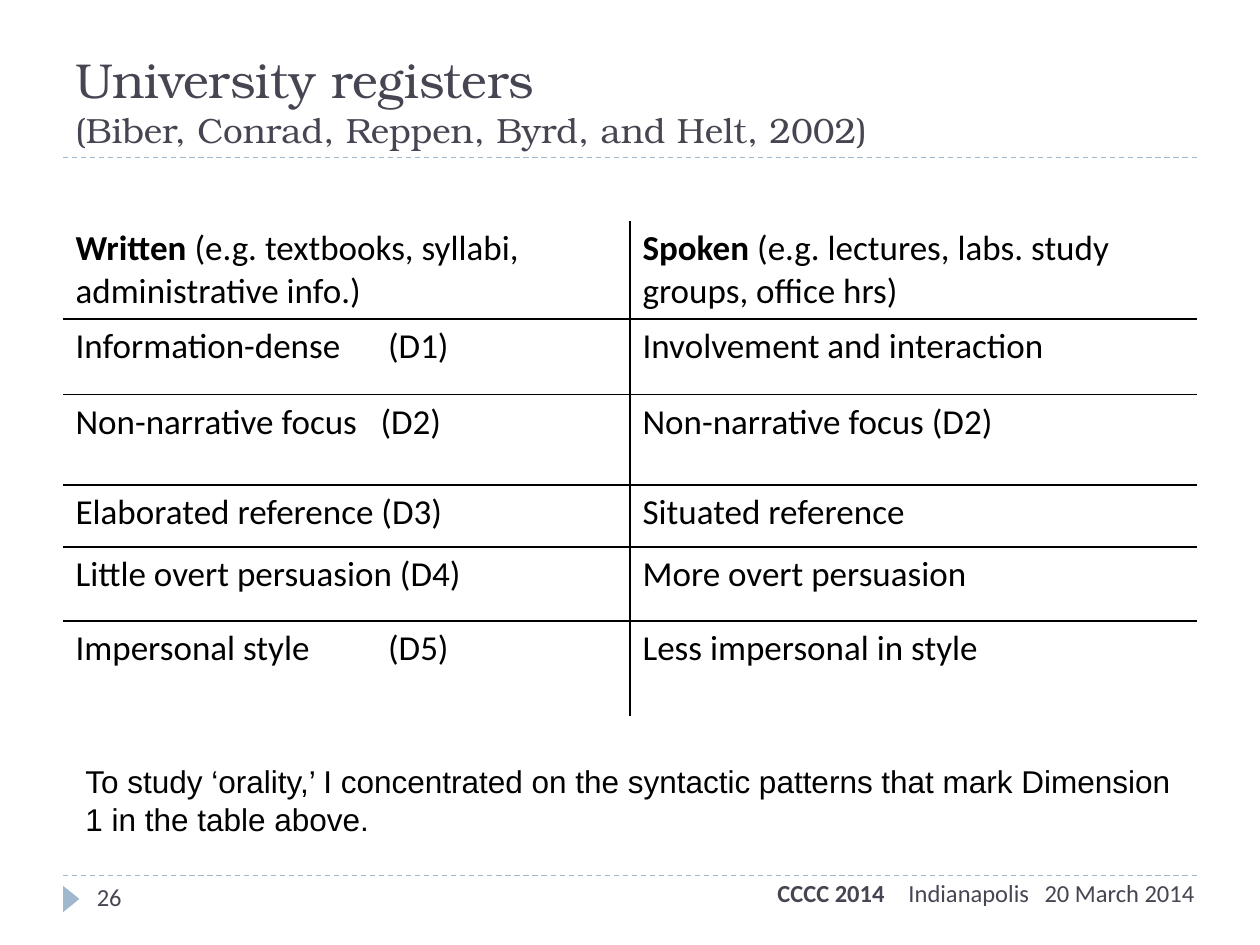
from dataclasses import dataclass

from lxml import etree
from pptx import Presentation
from pptx.dml.color import RGBColor
from pptx.enum.dml import MSO_LINE_DASH_STYLE
from pptx.enum.shapes import MSO_CONNECTOR, MSO_SHAPE
from pptx.enum.text import MSO_ANCHOR
from pptx.oxml.ns import qn
from pptx.util import Inches, Pt

DASH = MSO_LINE_DASH_STYLE.DASH
STRAIGHT = MSO_CONNECTOR.STRAIGHT
TRIANGLE = MSO_SHAPE.ISOSCELES_TRIANGLE
TOP, MIDDLE = MSO_ANCHOR.TOP, MSO_ANCHOR.MIDDLE

BLACK = RGBColor(0x00, 0x00, 0x00)
SLATE = RGBColor(0x46, 0x46, 0x53)
BLUE = RGBColor(0x9F, 0xB8, 0xCD)
SERIF, SANS, BODY = "TeX Gyre Bonum", "Calibri", "Arial"

LEFT, WIDTH = 0.5, 9
TABLE_TOP = 1.75


@dataclass(frozen=True)
class Span:
    text: str
    size: float
    font: str = SANS
    color: RGBColor = SLATE
    bold: bool = False


@dataclass(frozen=True)
class Label:
    left: float
    top: float
    width: float
    height: float
    lines: tuple[tuple[Span, ...], ...]
    anchor: MSO_ANCHOR = TOP
    inset: float = 0.1
    tabs: tuple[float, ...] = ()


@dataclass(frozen=True)
class Row:
    height: float
    written: tuple[Span, ...]
    spoken: tuple[Span, ...]
    tabs: tuple[float, ...] = ()


def entry(text: str, bold: bool = False) -> Span:
    return Span(text, 20, color=BLACK, bold=bold)


LABELS = (
    Label(0.67, 6.95, 2.17, 0.4, ((Span("26", 14),),)),
    Label(LEFT, 0.17, WIDTH, 1.25, (
        (Span("University registers", 28, SERIF),),
        (Span("(Biber, Conrad, Reppen, Byrd, and Helt, 2002)", 20, SERIF),),
    ), anchor=MIDDLE),
    Label(4.08, 6.92, 5.5, 0.4, (
        (Span("CCCC 2014", 14, bold=True),
         Span("\tIndianapolis\t20 March 2014", 14)),
    ), inset=2.09, tabs=(1.04, 2.12)),
    Label(0.58, 6, 8.83, 0.7, ((Span(
        "To study ‘orality,’ I concentrated on the syntactic patterns "
        "that mark Dimension 1 in the table above.", 18, BODY, BLACK),),)),
)

ROWS = (
    Row(0.67,
        (entry("Written ", True),
         entry("(e.g. textbooks, syllabi, administrative info.)")),
        (entry("Spoken ", True),
         entry("(e.g. lectures, labs. study groups, office hrs)"))),
    Row(0.6, (entry("Information-dense\t(D1)"),),
        (entry("Involvement and interaction"),), (2.48,)),
    Row(0.72, (entry("Non-narrative focus\t(D2)"),),
        (entry("Non-narrative focus (D2)"),), (2.42,)),
    Row(0.49, (entry("Elaborated reference (D3)"),),
        (entry("Situated reference"),)),
    Row(0.59, (entry("Little overt persuasion (D4)"),),
        (entry("More overt persuasion"),)),
    Row(0.75, (entry("Impersonal style\t(D5)"),),
        (entry("Less impersonal in style"),), (2.48,)),
)


def add_spans(para, spans: tuple[Span, ...]) -> None:
    for span in spans:
        run = para.add_run()
        run.text = span.text
        run.font.size = Pt(span.size)
        run.font.name = span.font
        run.font.bold = span.bold
        run.font.color.rgb = span.color


def add_tabs(para, stops: tuple[float, ...]) -> None:
    if not stops:
        return
    tab_list = etree.SubElement(para._p.get_or_add_pPr(), qn("a:tabLst"))
    for stop in stops:
        etree.SubElement(tab_list, qn("a:tab"), pos=str(Inches(stop)), algn="l")


def add_label(page, label: Label) -> None:
    box = page.shapes.add_textbox(Inches(label.left), Inches(label.top),
                                  Inches(label.width), Inches(label.height))
    frame = box.text_frame
    frame.word_wrap = True
    frame.vertical_anchor = label.anchor
    frame.margin_left = Inches(label.inset)
    frame.margin_right = Inches(0.05)
    para = frame.paragraphs[0]
    for index, spans in enumerate(label.lines):
        if index:
            para.add_line_break()
        add_spans(para, spans)
    add_tabs(para, label.tabs)


def add_rule(page, top: float) -> None:
    rule = page.shapes.add_connector(STRAIGHT, Inches(LEFT), Inches(top),
                                     Inches(LEFT + WIDTH), Inches(top))
    rule.line.color.rgb = BLUE
    rule.line.width = Pt(0.75)
    rule.line.dash_style = DASH
    etree.SubElement(rule._element.spPr, qn("a:effectLst"))


def add_marker(page) -> None:
    marker = page.shapes.add_shape(TRIANGLE, Inches(0.46), Inches(7.07),
                                   Inches(0.21), Inches(0.13))
    marker.rotation = 90
    marker.shadow.inherit = False
    marker.fill.solid()
    marker.fill.fore_color.rgb = BLUE
    marker.line.fill.background()


def set_borders(cell, visible: dict[str, bool]) -> None:
    properties = cell._tc.get_or_add_tcPr()
    for side, shown in visible.items():
        line = etree.SubElement(properties, qn(f"a:ln{side}"), w=str(Pt(1)))
        if shown:
            fill = etree.SubElement(line, qn("a:solidFill"))
            etree.SubElement(fill, qn("a:srgbClr"), val=str(BLACK))
        else:
            etree.SubElement(line, qn("a:noFill"))


def add_register_table(page, rows: tuple[Row, ...]) -> None:
    height = sum(row.height for row in rows)
    table = page.shapes.add_table(len(rows), 2, Inches(LEFT), Inches(TABLE_TOP),
                                  Inches(WIDTH), Inches(height)).table
    table.first_row = False
    table.horz_banding = False
    for row_index, row in enumerate(rows):
        table.rows[row_index].height = Inches(row.height)
        for column, spans in enumerate((row.written, row.spoken)):
            cell = table.cell(row_index, column)
            set_borders(cell, {"L": column == 1, "R": column == 0,
                               "T": row_index > 0,
                               "B": row_index < len(rows) - 1})
            cell.fill.background()
            para = cell.text_frame.paragraphs[0]
            para.space_before = Pt(6)
            add_spans(para, spans)
            if column == 0:
                add_tabs(para, row.tabs)


def main() -> None:
    deck = Presentation()
    deck.slide_width, deck.slide_height = Inches(10), Inches(7.5)
    page = deck.slides.add_slide(deck.slide_layouts[6])
    for top in (6.95, 1.25):
        add_rule(page, top)
    add_marker(page)
    add_register_table(page, ROWS)
    for label in LABELS:
        add_label(page, label)
    deck.save("out.pptx")


if __name__ == "__main__":
    main()
